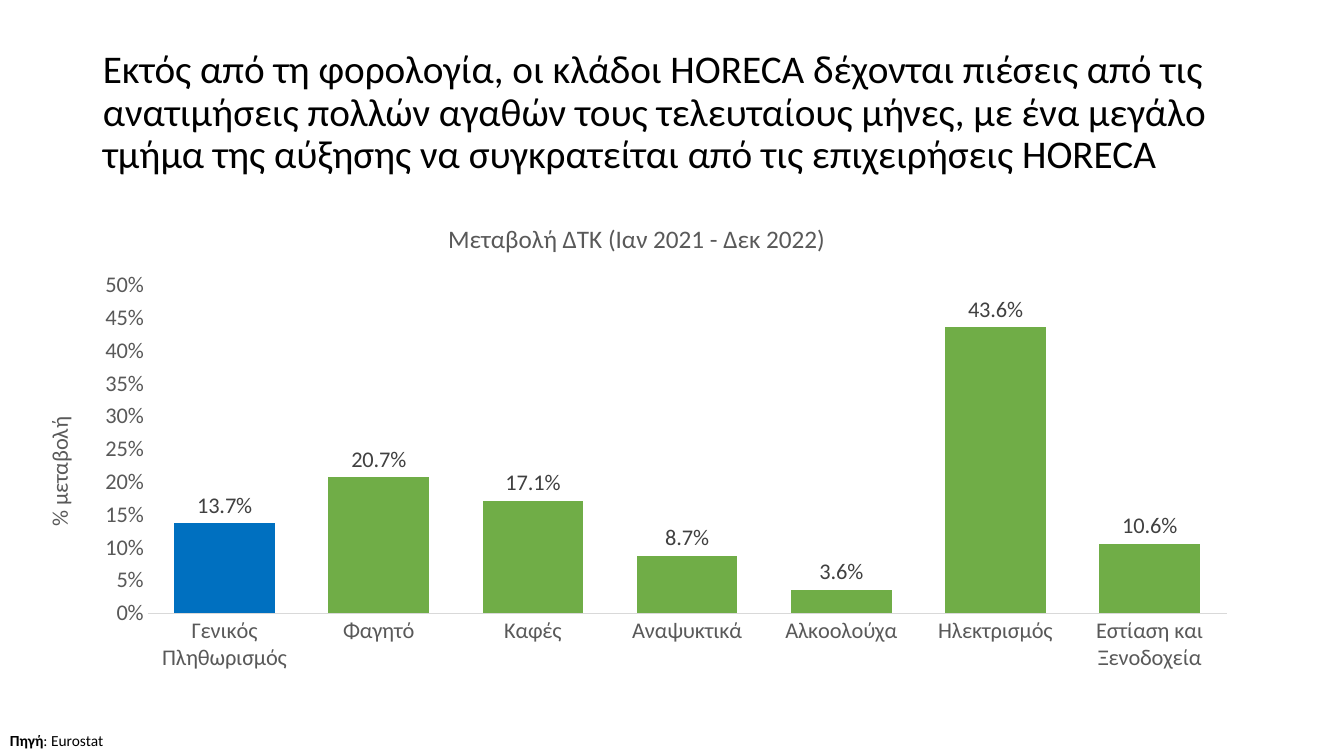
from pptx import Presentation
from pptx import util as u
from pptx.chart import data as cd
from pptx.dml.color import RGBColor
from pptx.enum import chart as ch, text
from pptx.oxml import ns

WIDE, HIGH = 13.33, 7.5
GREY, DARK, BLACK = "595959", "404040", "000000"
GREEN, BLUE, RULE = "70AD47", "0070C0", "D9D9D9"
HEAD = ("Εκτός από τη φορολογία, οι κλάδοι HORECA δέχονται πιέσεις από τις "
        "ανατιμήσεις πολλών αγαθών τους τελευταίους μήνες, με ένα μεγάλο "
        "τμήμα της αύξησης να συγκρατείται από τις επιχειρήσεις HORECA")
RATES = {
    "Γενικός Πληθωρισμός": 0.137,
    "Φαγητό": 0.207,
    "Καφές": 0.171,
    "Αναψυκτικά": 0.087,
    "Αλκοολούχα": 0.036,
    "Ηλεκτρισμός": 0.436,
    "Εστίαση και Ξενοδοχεία": 0.106,
}


def put(item, **values):
    """Set each named value as an attribute of the item."""
    for name, value in values.items():
        setattr(item, name, value)


def place(left, top, width, height):
    """Turn percentages of the slide into a box in inches."""
    return [u.Inches(share * side / 100) for share, side in
            zip((left, top, width, height), (WIDE, HIGH) * 2)]


def tint(part, color):
    """Give a fill a solid hex colour."""
    part.solid()
    part.fore_color.rgb = RGBColor.from_string(color)


def style(font, size, color, bold=False):
    """Format a font."""
    put(font, name="Calibri", size=u.Pt(size), bold=bold)
    tint(font.fill, color)


def write(para, words, size, color, bold=False):
    """Add a formatted run to a paragraph."""
    run = para.add_run()
    run.text = words
    style(run.font, size, color, bold)


def add_head(slide):
    """Move and fill the title."""
    title = slide.shapes.title
    box = place(6.9, 5.33, 86.27, 19.33)
    put(title, **dict(zip(("left", "top", "width", "height"), box)))
    put(title.text_frame, word_wrap=True, auto_size=text.MSO_AUTO_SIZE.NONE,
        vertical_anchor=text.MSO_ANCHOR.MIDDLE)
    para = title.text_frame.paragraphs[0]
    put(para, alignment=text.PP_ALIGN.LEFT, line_spacing=0.9)
    write(para, HEAD, 28, BLACK)


def add_source(slide):
    """Add the source line at the foot."""
    frame = slide.shapes.add_textbox(*place(0, 96, 67, 3.87)).text_frame
    put(frame, word_wrap=True, auto_size=text.MSO_AUTO_SIZE.SHAPE_TO_FIT_TEXT)
    write(frame.paragraphs[0], "Πηγή", 11, BLACK, True)
    write(frame.paragraphs[0], ": Eurostat", 11, BLACK)


def set_axes(chart):
    """Format both axes and the value title."""
    for axis in (chart.category_axis, chart.value_axis):
        put(axis, major_tick_mark=ch.XL_TICK_MARK.NONE,
            minor_tick_mark=ch.XL_TICK_MARK.NONE, has_major_gridlines=False)
        style(axis.tick_labels.font, 16, GREY)
    line = chart.category_axis.format.line
    line.width = u.Pt(0.75)
    tint(line.fill, RULE)
    scale = chart.value_axis
    scale.format.line.fill.background()
    put(scale, minimum_scale=0, maximum_scale=0.5, major_unit=0.05)
    put(scale.tick_labels, number_format="0%", number_format_is_linked=False)
    label = scale.axis_title
    write(label.text_frame.paragraphs[0], "% μεταβολή", 16, GREY)
    label.element.find(".//" + ns.qn("a:bodyPr")).set("rot", "-5400000")


def set_bars(plot):
    """Format the columns and their labels."""
    put(plot, gap_width=53, overlap=-27, vary_by_categories=False)
    bars = plot.series[0]
    bars.invert_if_negative = False
    tint(bars.format.fill, GREEN)
    tint(bars.points[0].format.fill, BLUE)
    labels = bars.data_labels
    put(labels, show_value=True, number_format="0.0%",
        number_format_is_linked=False,
        position=ch.XL_LABEL_POSITION.OUTSIDE_END)
    style(labels.font, 16, DARK)


def add_rates(slide):
    """Add the column chart of price changes."""
    data = cd.CategoryChartData(number_format="0.0%")
    data.categories = list(RATES)
    data.add_series("Series 1", list(RATES.values()))
    chart = slide.shapes.add_chart(ch.XL_CHART_TYPE.COLUMN_CLUSTERED,
                                   *place(1.65, 26.67, 91.45, 63.47),
                                   data).chart
    style(chart.font, 16, BLACK)
    put(chart, has_legend=False, has_title=True)
    write(chart.chart_title.text_frame.paragraphs[0],
          "Μεταβολή ΔΤΚ (Ιαν 2021 - Δεκ 2022)", 18, GREY)
    chart.chart_title.include_in_layout = False
    set_axes(chart)
    set_bars(chart.plots[0])


def main():
    """Build and save the slide."""
    deck = Presentation()
    put(deck, slide_width=u.Inches(WIDE), slide_height=u.Inches(HIGH))
    slide = deck.slides.add_slide(deck.slide_layouts[5])
    add_head(slide)
    add_source(slide)
    add_rates(slide)
    deck.save("out.pptx")


if __name__ == "__main__":
    main()
